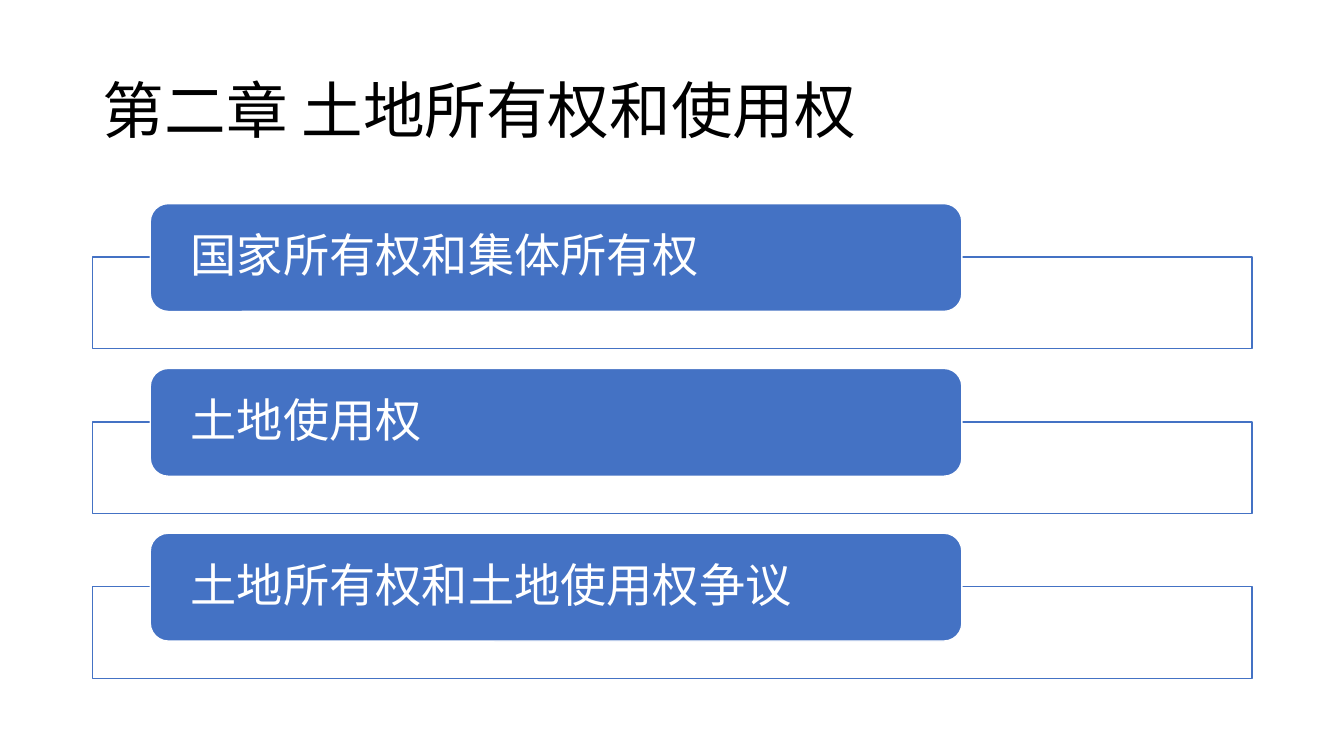
from lxml import etree
from pptx import Presentation
from pptx.dml.color import RGBColor
from pptx.enum.shapes import MSO_SHAPE
from pptx.enum.text import MSO_ANCHOR, MSO_AUTO_SIZE, PP_ALIGN
from pptx.oxml.ns import qn
from pptx.util import Inches, Pt

COLORS = {"blue": "4472C4", "white": "FFFFFF", "black": "000000"}
FONT = "Noto Sans CJK SC"
SECTIONS = ["国家所有权和集体所有权", "土地使用权", "土地所有权和土地使用权争议"]
FIRST_TOP = 2.02
PITCH = 1.635


def rgb(name):
    return RGBColor.from_string(COLORS[name])


def write_text(sp, text, size, color, inset_x=0.1, inset_y=0.05):
    tf = sp.text_frame
    tf.word_wrap = True
    tf.auto_size = MSO_AUTO_SIZE.NONE
    tf.vertical_anchor = MSO_ANCHOR.MIDDLE
    tf.margin_left = tf.margin_right = Inches(inset_x)
    tf.margin_top = tf.margin_bottom = Inches(inset_y)
    p = tf.paragraphs[0]
    p.alignment = PP_ALIGN.LEFT
    p.line_spacing = 0.9
    r = p.add_run()
    r.text = text
    r.font.size = Pt(size)
    r.font.color.rgb = rgb(color)
    r.font.name = FONT
    etree.SubElement(r.font._element, qn("a:ea"), typeface=FONT)


def place(sp, left, top, width, height):
    sp.left, sp.top = Inches(left), Inches(top)
    sp.width, sp.height = Inches(width), Inches(height)


def add_box(slide, kind, bounds, fill, line):
    sp = slide.shapes.add_shape(kind, *map(Inches, bounds))
    sp.shadow.inherit = False
    sp.fill.solid()
    sp.fill.fore_color.rgb = rgb(fill)
    sp.line.color.rgb = rgb(line)
    sp.line.width = Pt(1)
    return sp


def add_section(slide, text, top):
    add_box(slide, MSO_SHAPE.RECTANGLE, (0.92, top + 0.53, 11.5, 0.91), "white", "blue")
    sp = add_box(slide, MSO_SHAPE.ROUNDED_RECTANGLE, (1.49, top, 8.05, 1.07), "blue", "white")
    write_text(sp, text, 33, "white", inset_x=0.35, inset_y=0)


def main():
    prs = Presentation()
    prs.slide_width, prs.slide_height = Inches(13.33), Inches(7.5)
    slide = prs.slides.add_slide(prs.slide_layouts[5])
    title = slide.shapes.title
    place(title, 0.92, 0.4, 11.5, 1.45)
    write_text(title, "第二章 土地所有权和使用权", 44, "black")
    for i, text in enumerate(SECTIONS):
        add_section(slide, text, FIRST_TOP + i * PITCH)
    prs.save("out.pptx")


if __name__ == "__main__":
    main()
